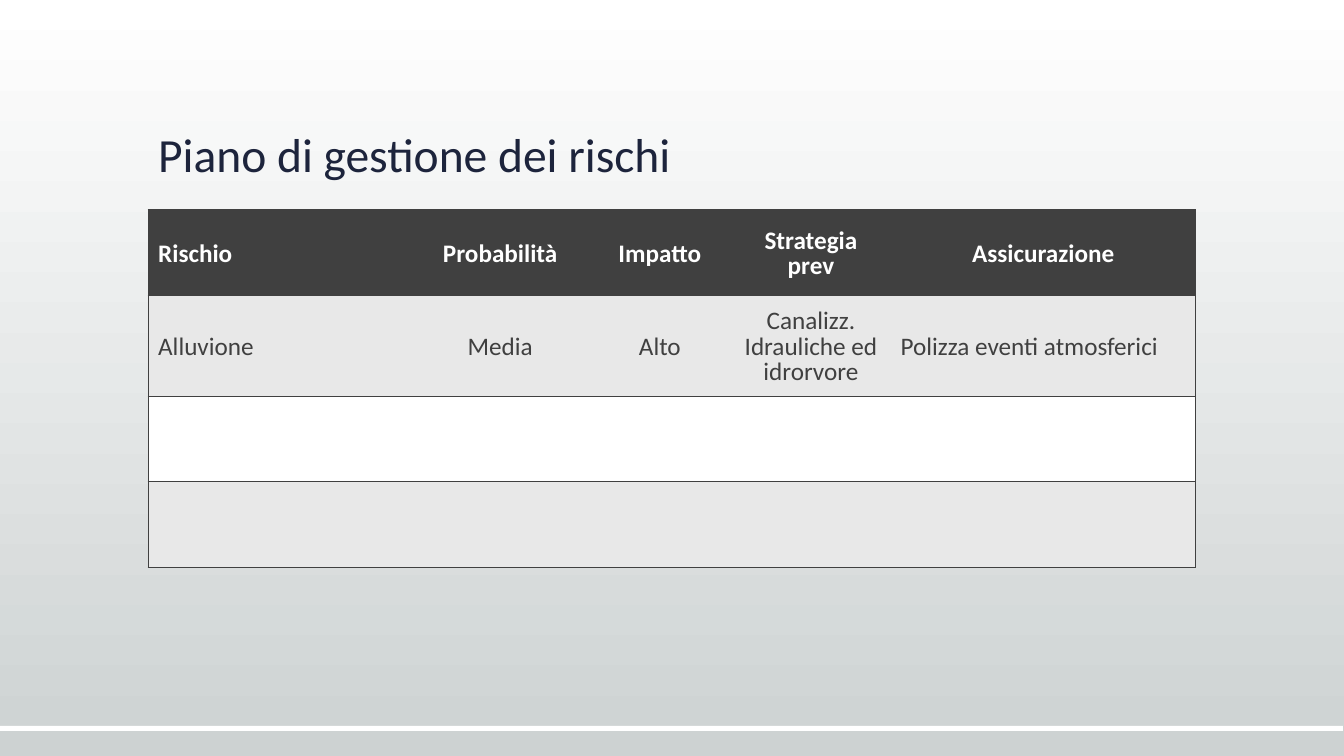
from lxml import etree
from pptx import Presentation
from pptx.dml.color import RGBColor
from pptx.enum.shapes import MSO_SHAPE
from pptx.enum.text import MSO_ANCHOR, MSO_AUTO_SIZE, PP_ALIGN
from pptx.oxml.ns import qn
from pptx.util import Inches, Pt

LEFT, CENTER = PP_ALIGN.LEFT, PP_ALIGN.CENTER
MIDDLE, BOTTOM = MSO_ANCHOR.MIDDLE, MSO_ANCHOR.BOTTOM
RECTANGLE = MSO_SHAPE.RECTANGLE
NO_AUTOFIT = MSO_AUTO_SIZE.NONE

WHITE = RGBColor(0xFF, 0xFF, 0xFF)
MIST = RGBColor(0xCD, 0xD2, 0xD2)
NAVY = RGBColor(0x1D, 0x24, 0x3C)
DARK = RGBColor(0x40, 0x40, 0x40)
LIGHT = RGBColor(0xE8, 0xE8, 0xE8)

FONT = "Calibri"
COLUMN_WIDTHS = [2.62, 1.75, 1.42, 1.58, 3.03]
ROW_HEIGHTS = [0.85, 1, 0.85, 0.85]
ROW_FILLS = [DARK, LIGHT, WHITE, LIGHT]
ROWS = [
    ["Rischio", "Probabilità", "Impatto", "Strategia\nprev", "Assicurazione"],
    ["Alluvione", "Media", "Alto", "Canalizz. Idrauliche ed idrorvore",
     "Polizza eventi atmosferici"],
    [""] * 5,
    [""] * 5,
]


def write_text(tf, text, size=18, color=DARK, bold=False, align=LEFT, spacing=0.83):
    tf.text = text
    for p in tf.paragraphs:
        p.alignment = align
        p.line_spacing = spacing
        p.space_before = Pt(0)
        p.font.size = Pt(size)
        for r in p.runs:
            r.font.name = FONT
            r.font.size = Pt(size)
            r.font.bold = bold
            r.font.color.rgb = color


def set_margins(tf):
    tf.margin_left = tf.margin_right = Inches(0.1)
    tf.margin_top = tf.margin_bottom = Inches(0.05)


def set_borders(cell, sides):
    tc_pr = cell._tc.get_or_add_tcPr()
    for side in "LRTB":
        line = etree.SubElement(tc_pr, qn(f"a:ln{side}"), w=str(Pt(0.75)))
        if side in sides:
            fill = etree.SubElement(line, qn("a:solidFill"))
            etree.SubElement(fill, qn("a:srgbClr"), val=str(DARK))
        else:
            etree.SubElement(line, qn("a:noFill"))


def set_background(s):
    fill = s.background.fill
    fill.gradient()
    fill.gradient_angle = 270
    for stop, color in zip(fill.gradient_stops, [WHITE, MIST]):
        stop.color.rgb = color


def add_bar(s):
    sp = s.shapes.add_shape(RECTANGLE, 0, Inches(7.2), Inches(13.33), Inches(0.05))
    sp.shadow.inherit = False
    sp.fill.solid()
    sp.fill.fore_color.rgb = WHITE
    sp.line.fill.background()


def format_title(s, text):
    sp = s.shapes.title
    sp.left, sp.top = Inches(1.47), Inches(0.51)
    sp.width, sp.height = Inches(10.4), Inches(1.35)
    tf = sp.text_frame
    tf.auto_size = NO_AUTOFIT
    tf.word_wrap = True
    tf.vertical_anchor = BOTTOM
    set_margins(tf)
    write_text(tf, text, size=34, color=NAVY, spacing=0.9)


def fill_cell(cell, row, col, text):
    last = len(COLUMN_WIDTHS) - 1
    set_borders(cell, "TB" + {0: "L", last: "R"}.get(col, ""))
    cell.fill.solid()
    cell.fill.fore_color.rgb = ROW_FILLS[row]
    cell.vertical_anchor = MIDDLE
    set_margins(cell)
    cell.margin_top = Inches(0.09)
    header = row == 0
    left = col == 0 or (col == last and not header)
    write_text(cell.text_frame, text, color=WHITE if header else DARK,
               bold=header, align=LEFT if left else CENTER)


def add_risk_table(s):
    table = s.shapes.add_table(
        len(ROWS), len(COLUMN_WIDTHS), Inches(1.47), Inches(2.08),
        Inches(sum(COLUMN_WIDTHS)), Inches(sum(ROW_HEIGHTS))).table
    table.horz_banding = False
    for column, width in zip(table.columns, COLUMN_WIDTHS):
        column.width = Inches(width)
    for row, height in zip(table.rows, ROW_HEIGHTS):
        row.height = Inches(height)
    for i, texts in enumerate(ROWS):
        for j, text in enumerate(texts):
            fill_cell(table.cell(i, j), i, j, text)


def main():
    prs = Presentation()
    prs.slide_width, prs.slide_height = Inches(13.34), Inches(7.5)
    s = prs.slides.add_slide(prs.slide_layouts[5])
    set_background(s)
    add_bar(s)
    format_title(s, "Piano di gestione dei rischi")
    add_risk_table(s)
    prs.save("out.pptx")


if __name__ == "__main__":
    main()
